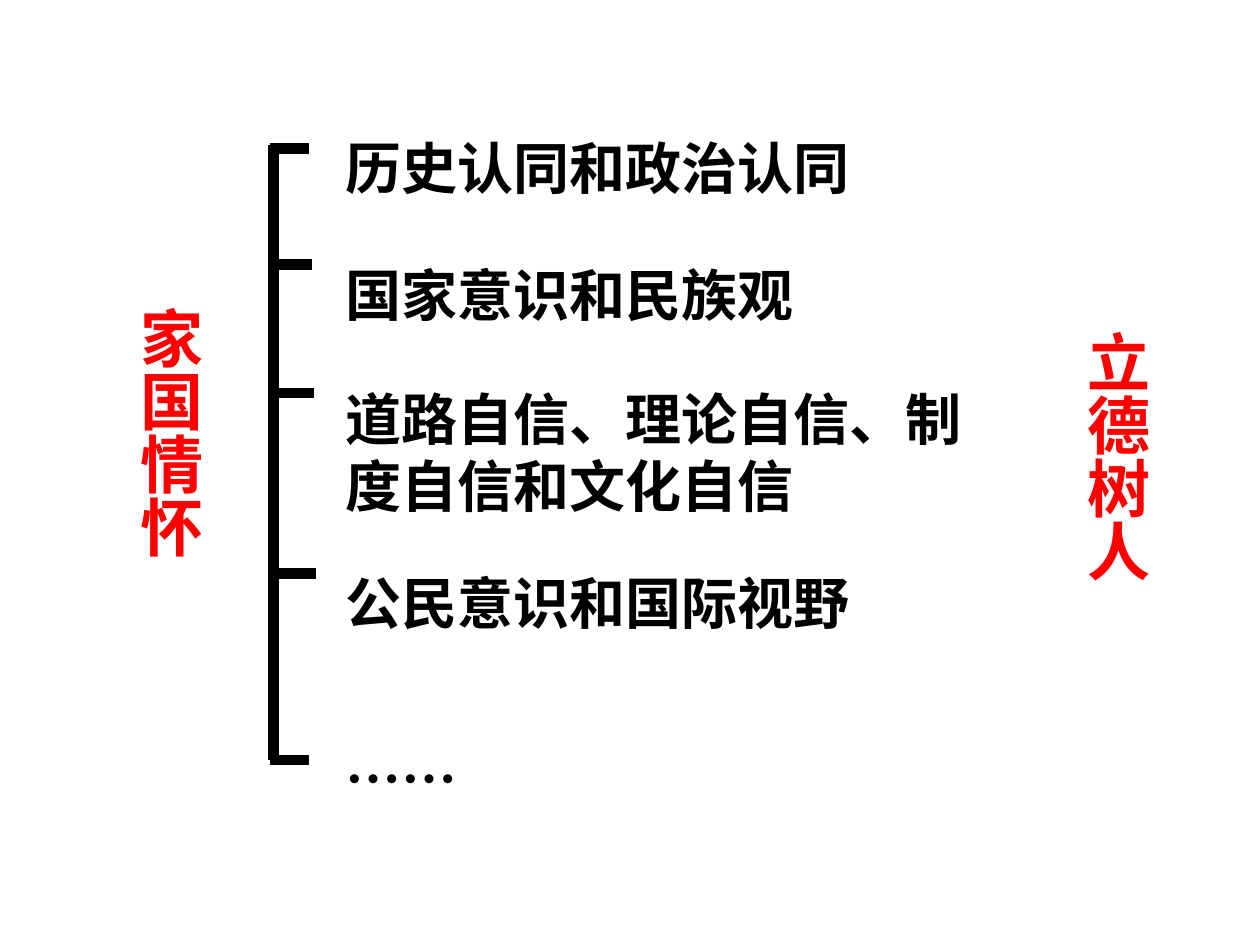
from lxml import etree
from pptx import Presentation
from pptx.dml.color import RGBColor
from pptx.enum.shapes import MSO_CONNECTOR
from pptx.enum.text import MSO_AUTO_SIZE
from pptx.oxml.ns import qn
from pptx.util import Inches, Pt

STRAIGHT = MSO_CONNECTOR.STRAIGHT
GROW = MSO_AUTO_SIZE.SHAPE_TO_FIT_TEXT
RED = RGBColor(0xFF, 0, 0)
BLACK = RGBColor(0, 0, 0)
FACE = "Noto Sans CJK SC"
COLS, ROWS = 100, 75

TITLE = {"size": Pt(36), "color": RED}
ITEM = {"size": Pt(32), "color": BLACK}

SIDES = [("家国情怀", 8.9, 23.4), ("立德树人", 84, 25.3)]
ITEMS = [
    ("历史认同和政治认同", 10.1, 6.4),
    ("国家意识和民族观", 20.2, 6.4),
    ("道路自信、理论自信、制度自信和文化自信", 30, 11.8),
    ("公民意识和国际视野", 44.6, 6.4),
    ("……", 58.6, 6.4),
]
TICKS = [(21.4, 11.8), (21.7, 21), (21.8, 31.2), (22, 45.5), (21.4, 60.3)]


class Board:
    def __init__(self, deck):
        self.slide = deck.slides.add_slide(deck.slide_layouts[6])
        self.col = deck.slide_width / COLS
        self.row = deck.slide_height / ROWS

    def place(self, x, y):
        return round(x * self.col), round(y * self.row)

    def text(self, words, x, y, w, h, style, down=False):
        box = self.slide.shapes.add_textbox(*self.place(x, y), *self.place(w, h))
        frame = box.text_frame
        frame.word_wrap = not down
        frame.auto_size = GROW
        if down:
            frame._txBody.bodyPr.set("vert", "eaVert")
        run = frame.paragraphs[0].add_run()
        run.text = words
        font = run.font
        for key, value in {"name": FACE, "bold": True, "size": style["size"]}.items():
            setattr(font, key, value)
        font.color.rgb = style["color"]
        east = etree.SubElement(run._r.get_or_add_rPr(), qn("a:ea"))
        east.set("typeface", FACE)

    def line(self, x1, y1, x2, y2):
        bar = self.slide.shapes.add_connector(
            STRAIGHT, *self.place(x1, y1), *self.place(x2, y2)
        )
        bar.line.color.rgb = BLACK
        bar.line.width = Pt(6)
        etree.SubElement(bar._element.spPr, qn("a:effectLst"))


def main():
    deck = Presentation()
    deck.slide_width, deck.slide_height = Inches(10), Inches(7.5)
    board = Board(deck)
    board.line(21.7, 11.5, 21.7, 60.3)
    for x, y in TICKS:
        board.line(x, y, x + 3.1, y)
    for words, y, h in ITEMS:
        board.text(words, 26.4, y, 53.5, h, ITEM)
    for words, x, y in SIDES:
        board.text(words, x, y, 8.1, 21.2, TITLE, down=True)
    deck.save("out.pptx")


if __name__ == "__main__":
    main()
